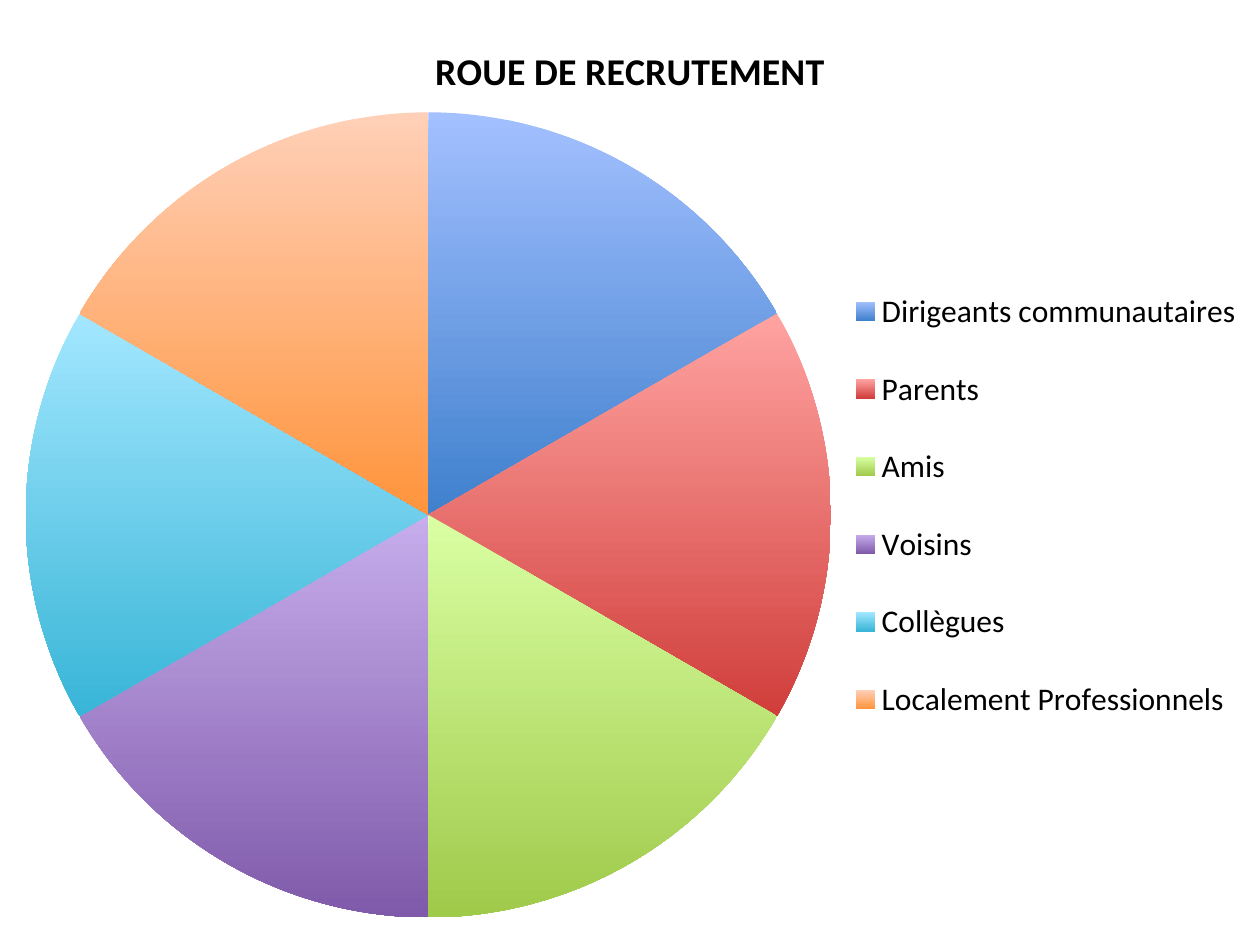
from dataclasses import dataclass

from lxml import etree
from pptx import Presentation
from pptx import util as u
from pptx.chart import data as cd
from pptx.dml import color as dc
from pptx.enum import chart as ch
from pptx.oxml import ns


@dataclass(frozen=True)
class Theme:
    font: str = "Calibri"
    ink: str = "000000"
    body: float = 18
    head: float = 21.6
    # Top and bottom colour of each slice
    fills: tuple = (
        ("A3C0FF", "3F80CD"),
        ("FFA3A1", "D03E3B"),
        ("D9FFA3", "9FCA4A"),
        ("C7ADEC", "7F5AAA"),
        ("A3E7FF", "38B5D7"),
        ("FFD0B8", "FF943C"),
    )


THEME = Theme()
TITLE = "ROUE DE RECRUTEMENT"
GROUPS = ("Dirigeants communautaires", "Parents", "Amis", "Voisins",
          "Collègues", "Localement Professionnels")
SHARE = 17


def style(font, size, bold=False):
    font.name = THEME.font
    font.size = u.Pt(size)
    font.bold = bold
    font.color.rgb = dc.RGBColor.from_string(THEME.ink)


def place(node, x, y, w=None, h=None, inner=False):
    """Set a chart part's place as fractions of the chart."""
    for old in node.findall(ns.qn("c:layout")):
        node.remove(old)
    lay = etree.Element(ns.qn("c:layout"))
    man = etree.SubElement(lay, ns.qn("c:manualLayout"))
    rules = [("layoutTarget", "inner")] if inner else []
    rules += [("xMode", "edge"), ("yMode", "edge"), ("x", x), ("y", y)]
    if w is not None:
        rules += [("w", w), ("h", h)]
    for tag, val in rules:
        etree.SubElement(man, ns.qn("c:" + tag)).set("val", str(val))
    # The layout follows the text of a title or the position of a legend
    lead = [i for i, kid in enumerate(node)
            if kid.tag in (ns.qn("c:tx"), ns.qn("c:legendPos"))]
    node.insert(lead[0] + 1 if lead else 0, lay)


def shade(fill, pair):
    fill.gradient()
    fill.gradient_angle = 270
    for stop, tone in zip(fill.gradient_stops, pair):
        stop.color.rgb = dc.RGBColor.from_string(tone)


def add_pie(slide):
    data = cd.CategoryChartData()
    data.categories = GROUPS
    data.add_series(TITLE, [SHARE] * len(GROUPS))
    chart = slide.shapes.add_chart(
        ch.XL_CHART_TYPE.PIE, u.Pt(0), u.Pt(0), u.Pt(720), u.Pt(535), data).chart
    style(chart.font, THEME.body)

    # Slices
    plot = chart.plots[0]
    plot.vary_by_categories = True
    for i, pair in enumerate(THEME.fills):
        part = plot.series[0].points[i].format
        shade(part.fill, pair)
        part.line.fill.background()
    area = chart.element.find(".//" + ns.qn("c:plotArea"))
    place(area, 0.02, 0.12, 0.64, 0.86, inner=True)
    return chart


def add_head(chart):
    chart.has_title = True
    run = chart.chart_title.text_frame.paragraphs[0].add_run()
    run.text = TITLE
    style(run.font, THEME.head, bold=True)
    chart.chart_title.include_in_layout = False
    place(chart.element.find(".//" + ns.qn("c:title")), 0.34, 0.04)


def add_key(chart):
    chart.has_legend = True
    key = chart.legend
    key.position = ch.XL_LEGEND_POSITION.RIGHT
    key.include_in_layout = False
    style(key.font, THEME.body)
    place(chart.element.find(".//" + ns.qn("c:legend")), 0.67, 0.27, 0.32, 0.54)


def main():
    deck = Presentation()
    deck.slide_width, deck.slide_height = u.Pt(720), u.Pt(540)
    slide = deck.slides.add_slide(deck.slide_layouts[6])
    chart = add_pie(slide)
    add_head(chart)
    add_key(chart)
    deck.save("out.pptx")


if __name__ == "__main__":
    main()
